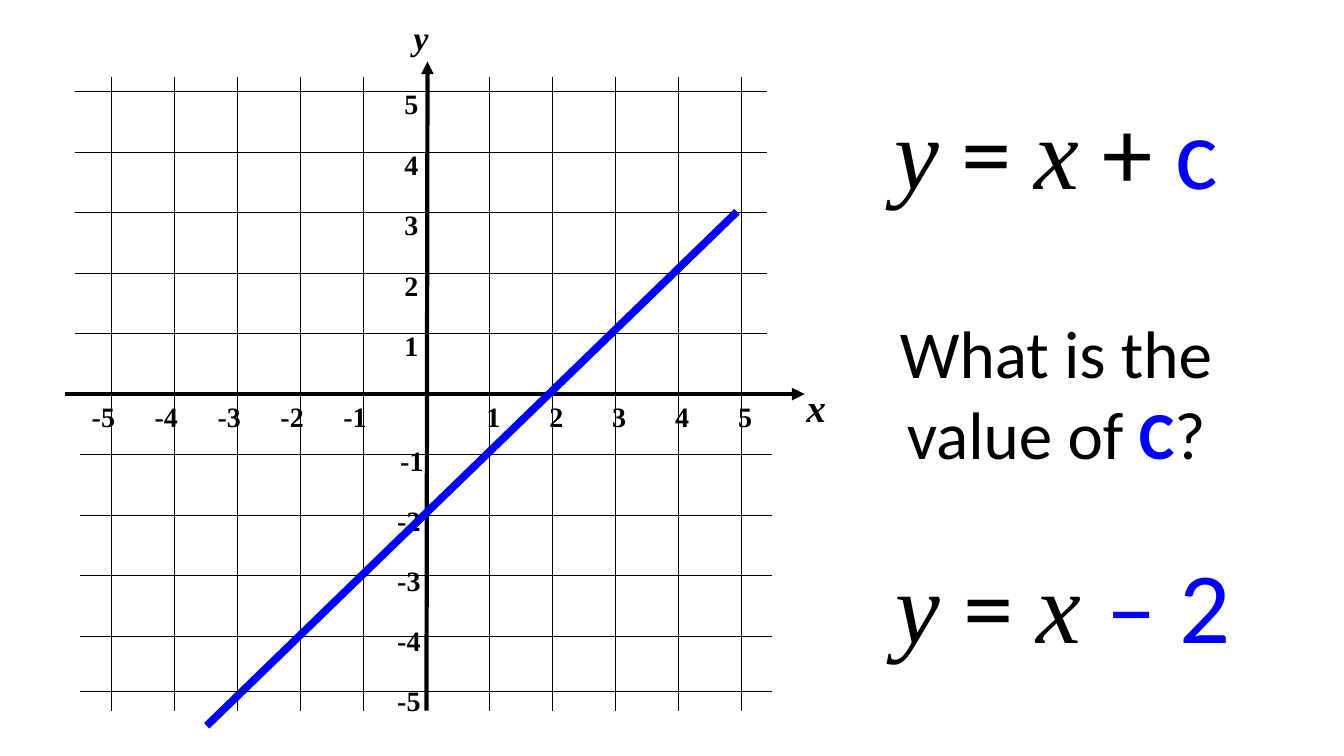
from pptx import Presentation
from pptx.dml.color import RGBColor
from pptx.enum.shapes import MSO_CONNECTOR
from pptx.enum.text import PP_ALIGN
from pptx.oxml.ns import qn
from pptx.util import Pt
from lxml import etree

LINE = MSO_CONNECTOR.STRAIGHT
LEFT, MID = PP_ALIGN.LEFT, PP_ALIGN.CENTER
BLACK = RGBColor(0, 0, 0)
BLUE = RGBColor(0, 0, 255)
SERIF, SANS = "Times New Roman", "Calibri"
PX = 9144

MATH = (SERIF, BLACK, False, True)
PLAIN = (SANS, BLACK, False, False)
HINT = (SANS, BLUE, False, False)
STRONG = (SANS, BLUE, True, False)

TEXTS = [
    ((874, 83, 347, 131), 72,
     [("y", MATH), (" = ", PLAIN), ("x", MATH), (" + ", PLAIN), ("c", HINT)]),
    ((870, 533, 369, 131), 72,
     [("y", MATH), (" = ", PLAIN), ("x ", MATH), ("– 2", HINT)]),
    ((870, 304, 355, 172), 48,
     [("What is the value of ", PLAIN), ("C", STRONG), ("?", PLAIN)]),
]
AXES = [(423, 705, 424, 61), (64, 391, 798, 391)]
NAMES = [("y", (390, 13, 55, 37), 24), ("x", (782, 376, 55, 65), 28)]
GRAPH = (205, 720, 731, 210)
ZERO_X, ZERO_Y = 423, 391
STEP_X, STEP_Y = 62.4, 60
TICKS = [n for n in range(-5, 6) if n]

deck = Presentation()
deck.slide_width, deck.slide_height = 1333 * PX, 750 * PX
slide = deck.slides.add_slide(deck.slide_layouts[6])


def scale(nums):
    return [round(n * PX) for n in nums]


def rule(ends, color, width, arrow=False):
    line = slide.shapes.add_connector(LINE, *scale(ends))
    line.line.color.rgb = color
    line.line.width = Pt(width)
    if arrow:
        tail = etree.SubElement(line.line._get_or_add_ln(), qn("a:tailEnd"))
        tail.set("type", "triangle")
    etree.SubElement(line._element.spPr, qn("a:effectLst"))


def style(font, look):
    font.name, font.color.rgb, font.bold, font.italic = look


def write(box, size, runs, inset, align):
    frame = slide.shapes.add_textbox(*scale(box)).text_frame
    frame.word_wrap = True
    frame.margin_left = frame.margin_right = inset[0] * PX
    frame.margin_top = frame.margin_bottom = inset[1] * PX
    para = frame.paragraphs[0]
    para.alignment = align
    para.font.size = Pt(size)
    if len(runs) == 1:
        style(para.font, runs[0][1])
    for text, look in runs:
        run = para.add_run()
        run.text = text
        if len(runs) > 1:
            style(run.font, look)


def label(text, box, size=20, italic=False, align=LEFT):
    write(box, size, [(text, (SERIF, BLACK, True, italic))], (4, 4), align)


def row(n):
    y = ZERO_Y - STEP_Y * n if n > -5 else 686
    x = 74 if n > 0 else 79
    rule((x, y, x + 687, y), BLACK, 0.75)


for ends in AXES:
    rule(ends, BLACK, 3, True)
for n in TICKS:
    x = ZERO_X + STEP_X * n
    rule((x, 76, x, 705), BLACK, 0.25 if n > 0 else 0.75)
    if n > -5:
        row(n)
for n in TICKS:
    x = ZERO_X + STEP_X * n
    if n > 0:
        label(str(n), (x - 7, 392, 24, 30))
        label(str(n), (397, ZERO_Y - STEP_Y * n - 9, 24, 30))
    else:
        label(str(n), (x - 24, 392, 67, 28))
        left = 393 if n == -1 else 390
        label(str(n), (left, 436 - 59.5 * (n + 1), 66, 30))
for name, box, size in NAMES:
    label(name, box, size, True, MID)
rule(GRAPH, BLUE, 5.5)
row(-5)
for box, size, runs in TEXTS:
    write(box, size, runs, (10, 5), MID)

deck.save("out.pptx")
